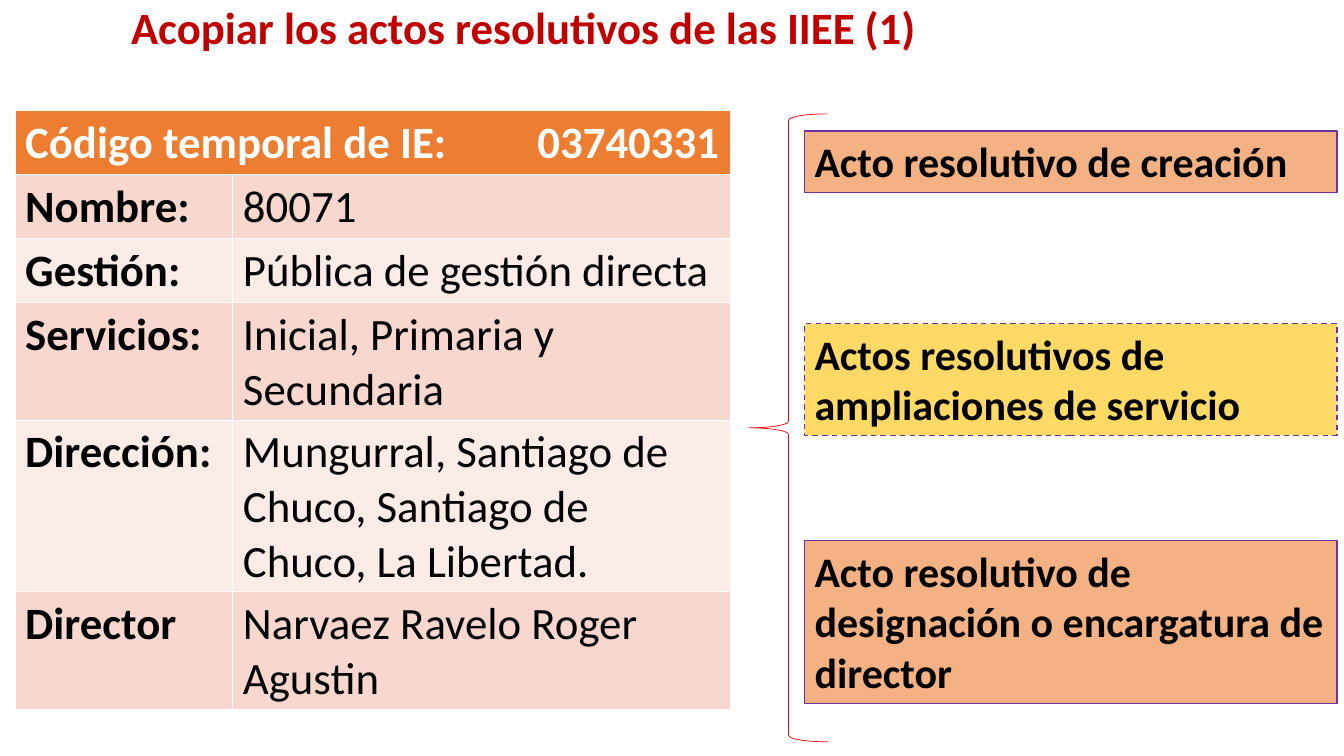
from pptx import Presentation
from pptx.dml.color import RGBColor
from pptx.enum.dml import MSO_LINE
from pptx.enum.shapes import MSO_SHAPE
from pptx.enum.text import MSO_ANCHOR, MSO_AUTO_SIZE, PP_ALIGN
from pptx.oxml import parse_xml
from pptx.oxml.ns import nsdecls
from pptx.util import Inches, Pt

RECTANGLE, LEFT_BRACE = MSO_SHAPE.RECTANGLE, MSO_SHAPE.LEFT_BRACE
MIDDLE, TOP = MSO_ANCHOR.MIDDLE, MSO_ANCHOR.TOP
LEFT, DASH = PP_ALIGN.LEFT, MSO_LINE.DASH
NO_FIT, GROW = MSO_AUTO_SIZE.NONE, MSO_AUTO_SIZE.SHAPE_TO_FIT_TEXT

# Content
TITLE = "Acopiar los actos resolutivos de las IIEE (1)"
HEADER = "Código temporal de IE:\t03740331"
SCHOOL = [  # label, value, row height
    ("Nombre:", "80071", 0.62),
    ("Gestión:", "Pública de gestión directa", 0.62),
    ("Servicios:", "Inicial, Primaria y Secundaria", 1.14),
    ("Dirección:", "Mungurral, Santiago de Chuco, Santiago de Chuco, La Libertad.", 1.65),
    ("Director", "Narvaez Ravelo Roger Agustin", 1.14),
]
ACTS = [  # text, top, height, fill, dashed outline
    ("Acto resolutivo de creación", 1.3, 0.61, "orange", False),
    ("Actos resolutivos de ampliaciones de servicio", 3.21, 1.11, "yellow", True),
    ("Acto resolutivo de designación o encargatura de director", 5.36, 1.62, "orange", False),
]

# Formats
COLORS = {
    "title": "C00000", "header": "ED7D31", "band": "F8D7CE", "light": "FCECE8",
    "orange": "F4B183", "yellow": "FFD966", "outline": "7030A0", "brace": "FF0000",
    "black": "000000", "white": "FFFFFF",
}
HEADER_HEIGHT = 0.62
COLUMNS = (2.16, 4.94)


def color(name):
    return RGBColor.from_string(COLORS[name])


def write(frame, text, size, ink, bold):
    frame.text = text
    para = frame.paragraphs[0]
    para.alignment = LEFT
    font = para.runs[0].font
    values = {"name": "Calibri", "size": Pt(size), "bold": bold}
    for name, value in values.items():
        setattr(font, name, value)
    font.color.rgb = color(ink)
    return para


def fill(part, name):
    part.fill.solid()
    part.fill.fore_color.rgb = color(name)


def outline(shape, name, width):
    shape.shadow.inherit = False
    shape.line.color.rgb = color(name)
    shape.line.width = Pt(width)


deck = Presentation()
deck.slide_width, deck.slide_height = Inches(13.33), Inches(7.5)
page = deck.slides.add_slide(deck.slide_layouts[5])

# Title
title = page.shapes.title
title.left, title.top, title.width, title.height = map(Inches, (1.2, 0, 10.23, 0.59))
title.text_frame.vertical_anchor = MIDDLE
title.text_frame.auto_size = NO_FIT
write(title.text_frame, TITLE, 32, "title", True).line_spacing = 0.9

# Boxes for the acts
for text, top, height, fill_name, dashed in ACTS:
    box = page.shapes.add_shape(RECTANGLE, *map(Inches, (7.98, top, 5.28, height)))
    fill(box, fill_name)
    outline(box, "outline", 1)
    if dashed:
        box.line.dash_style = DASH
    frame = box.text_frame
    frame.word_wrap, frame.vertical_anchor, frame.auto_size = True, TOP, GROW
    write(frame, text, 30, "black", True)

# School table
heights = [HEADER_HEIGHT] + [height for _, _, height in SCHOOL]
area = map(Inches, (0.15, 1.1, sum(COLUMNS), sum(heights)))
table = page.shapes.add_table(len(heights), len(COLUMNS), *area).table
for column, width in zip(table.columns, COLUMNS):
    column.width = Inches(width)
for row, height in zip(table.rows, heights):
    row.height = Inches(height)

header = table.cell(0, 0)
header.merge(table.cell(0, 1))
fill(header, "header")
para = write(header.text_frame, HEADER, 32, "white", True)
tabs = parse_xml(f'<a:tabLst {nsdecls("a")}><a:tab pos="{Inches(5.08)}" algn="l"/></a:tabLst>')
para._p.get_or_add_pPr().append(tabs)

for row, (label, value, _) in enumerate(SCHOOL, start=1):
    for column, text in enumerate((label, value)):
        cell = table.cell(row, column)
        fill(cell, "band" if row % 2 else "light")
        write(cell.text_frame, text, 32, "black", column == 0)

# Brace between table and boxes
brace = page.shapes.add_shape(LEFT_BRACE, *map(Inches, (7.43, 1.13, 0.78, 6.23)))
brace.fill.background()
outline(brace, "brace", 0.5)

deck.save("out.pptx")
